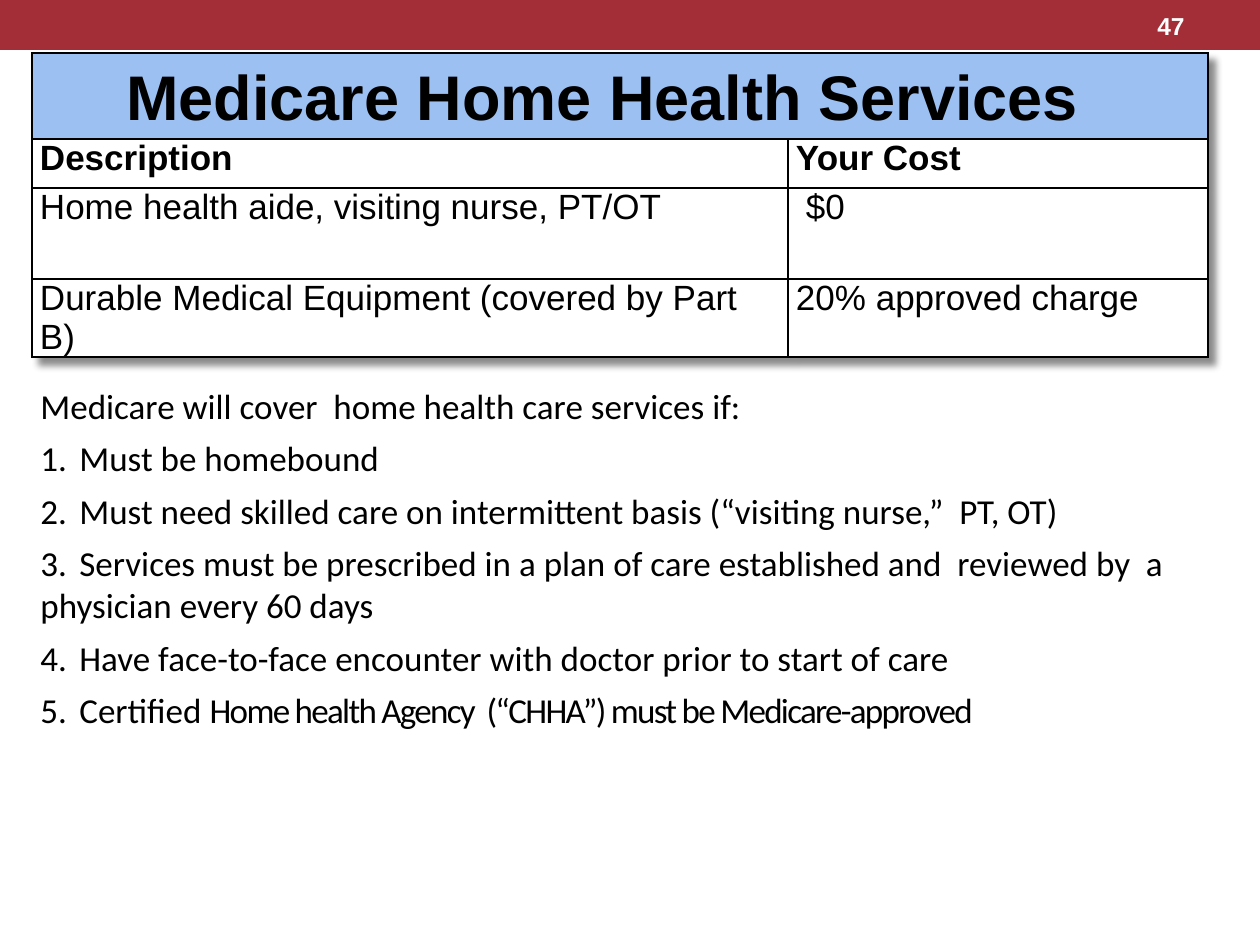
import pptx
import pptx.util
import pptx.dml.color
import pptx.enum.shapes
import pptx.enum.text
import pptx.oxml.ns
from lxml import etree

PX = pptx.util.Inches(1) / 126
COLORS = {"red": "A32E37", "blue": "9BC0F1", "white": "FFFFFF", "black": "000000"}
ALIGN = pptx.enum.text.PP_ALIGN
ANCHOR = pptx.enum.text.MSO_ANCHOR

ROWS = [
    ("Description", "Your Cost"),
    ("Home health aide, visiting nurse, PT/OT", "$0"),
    ("Durable Medical Equipment (covered by Part B)", "20% approved charge"),
]
CONDITIONS = [
    [("Medicare will cover  home health care services if:", 0)],
    [("1.\tMust be homebound", 0)],
    [("2.\tMust need skilled care on intermittent basis (“visiting nurse,”  PT, OT)", 0)],
    [("3.\tServices must be prescribed in a plan of care established and  reviewed by  a physician every 60 days", 0)],
    [("4.\tHave face-to-face encounter with doctor prior to start of care", 0)],
    [("5.\tCertified ", 0), ("Home health Agency  (“CHHA”) must be Medicare-approved", -1)],
]


def px(length):
    return pptx.util.Emu(round(length * PX))


def rgb(name):
    return pptx.dml.color.RGBColor.from_string(COLORS[name])


def add_xml(parent, tag, **attributes):
    return etree.SubElement(parent, pptx.oxml.ns.qn(tag), attributes)


def add_span(para, text, font, size, color="black", bold=False, spacing=0):
    span = para.add_run()
    span.text = text
    span.font.name = font
    span.font.size = pptx.util.Pt(size)
    span.font.bold = bold
    span.font.color.rgb = rgb(color)
    if spacing:
        span.font._element.set("spc", str(spacing * 100))


def add_rectangle(page, left, top, width, height, color):
    box = page.shapes.add_shape(
        pptx.enum.shapes.MSO_SHAPE.RECTANGLE, px(left), px(top), px(width), px(height))
    box.shadow.inherit = False
    box.fill.solid()
    box.fill.fore_color.rgb = rgb(color)
    box.line.fill.background()
    return box


def add_page_number(page, number):
    box = page.shapes.add_textbox(px(1050), px(3), px(147), px(45))
    frame = box.text_frame
    frame.word_wrap = True
    frame.vertical_anchor = ANCHOR.MIDDLE
    para = frame.paragraphs[0]
    para.alignment = ALIGN.RIGHT
    add_span(para, number, "Arial", 14, "white", True)


def style_cell(cell, color):
    cell.margin_left = cell.margin_right = px(8)
    cell.margin_top = cell.margin_bottom = 0
    properties = cell._tc.get_or_add_tcPr()
    for side in ("a:lnL", "a:lnR", "a:lnT", "a:lnB"):
        line = add_xml(properties, side, w="12700")
        add_xml(add_xml(line, "a:solidFill"), "a:srgbClr", val=COLORS["black"])
    cell.fill.solid()
    cell.fill.fore_color.rgb = rgb(color)


def add_table_shadow(table):
    effects = etree.Element(pptx.oxml.ns.qn("a:effectLst"))
    shadow = add_xml(effects, "a:outerShdw", blurRad="50800", dist="76200",
                     dir="2700000", algn="tl", rotWithShape="0")
    color = add_xml(shadow, "a:srgbClr", val=COLORS["black"])
    add_xml(color, "a:alpha", val="45000")
    table._tbl.tblPr.insert(0, effects)


def add_cost_table(page):
    widths, heights = (756, 420), (86, 49, 91, 69)
    frame = page.shapes.add_table(
        len(heights), len(widths), px(32), px(53), px(sum(widths)), px(sum(heights)))
    table = frame.table
    for column, width in zip(table.columns, widths):
        column.width = px(width)
    for row, height in zip(table.rows, heights):
        row.height = px(height)
    for index, row in enumerate(table.rows):
        for cell in row.cells:
            style_cell(cell, "white" if index else "blue")
    add_table_shadow(table)

    heading = table.cell(0, 0)
    heading.merge(table.cell(0, 1))
    heading.margin_right = px(43)
    para = heading.text_frame.paragraphs[0]
    para.alignment = ALIGN.CENTER
    para.line_spacing = 1.15
    add_span(para, "Medicare Home Health Services", "Arial", 36, bold=True)

    for row_index, texts in enumerate(ROWS, 1):
        for column_index, text in enumerate(texts):
            para = table.cell(row_index, column_index).text_frame.paragraphs[0]
            add_span(para, text, "Arial", 20, bold=row_index == 1)
    table.cell(2, 1).margin_left = px(18)


def add_conditions(page):
    box = add_rectangle(page, 28, 378, 1201, 401, "white")
    frame = box.text_frame
    frame.word_wrap = True
    frame.vertical_anchor = ANCHOR.TOP
    for index, spans in enumerate(CONDITIONS):
        para = frame.add_paragraph() if index else frame.paragraphs[0]
        para.alignment = ALIGN.LEFT
        if index:
            para.space_before = pptx.util.Pt(6)
            tabs = add_xml(para._p.get_or_add_pPr(), "a:tabLst")
            for position in (39, 79):
                add_xml(tabs, "a:tab", pos=str(px(position)), algn="l")
        for text, spacing in spans:
            add_span(para, text, "Calibri", 20, spacing=spacing)


def main():
    deck = pptx.Presentation()
    deck.slide_width, deck.slide_height = px(1260), px(945)
    page = deck.slides.add_slide(deck.slide_layouts[6])
    add_rectangle(page, 0, 0, 1260, 50, "red")
    add_cost_table(page)
    add_page_number(page, "47")
    add_conditions(page)
    deck.save("out.pptx")


if __name__ == "__main__":
    main()
